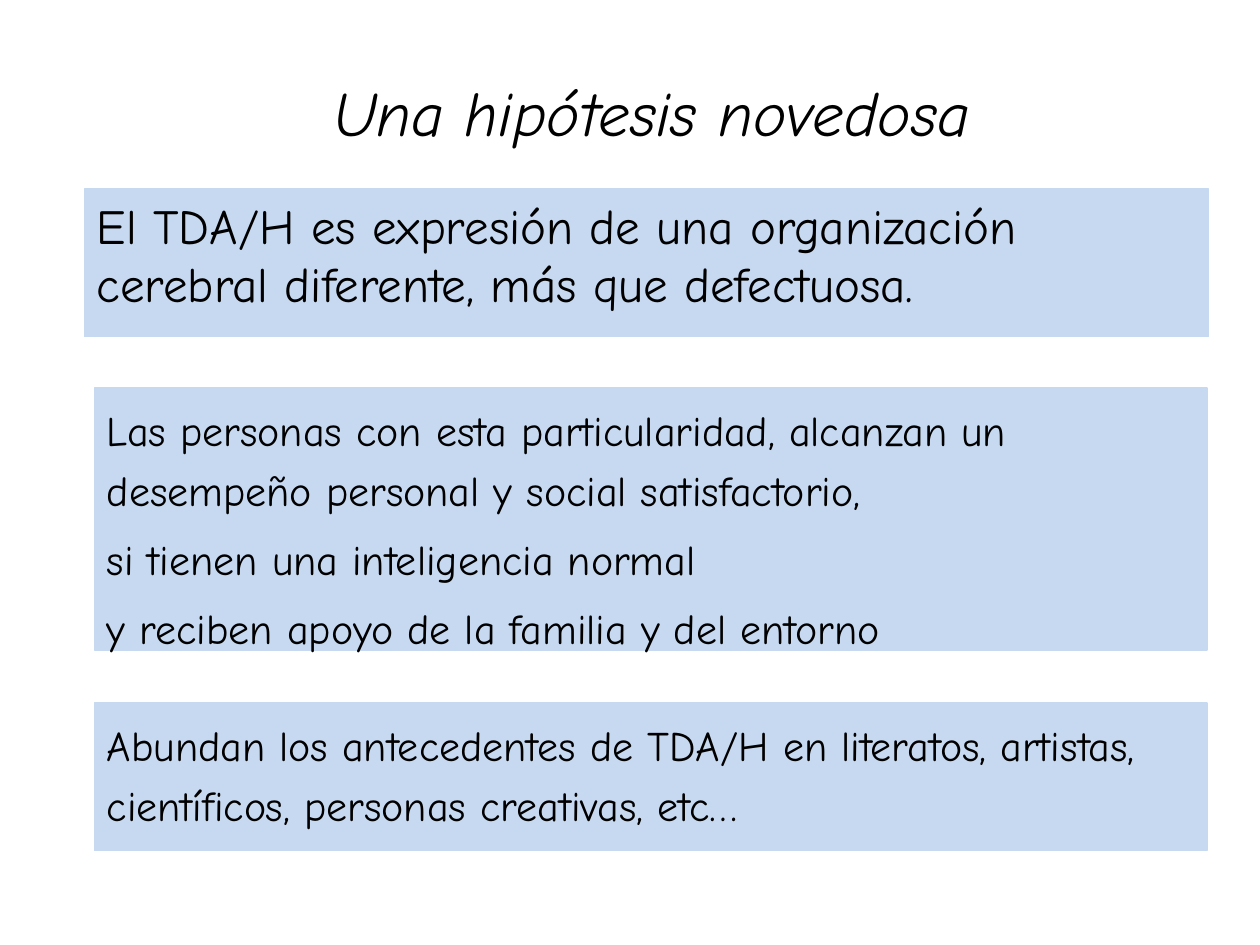
from pptx import Presentation
from pptx.dml.color import RGBColor
from pptx.enum.shapes import MSO_SHAPE
from pptx.enum.text import MSO_ANCHOR, PP_ALIGN
from pptx.util import Inches, Pt

RECT = MSO_SHAPE.RECTANGLE
TOP, MIDDLE = MSO_ANCHOR.TOP, MSO_ANCHOR.MIDDLE
LEFT, CENTER = PP_ALIGN.LEFT, PP_ALIGN.CENTER


def rgb(value):
    return RGBColor.from_string(value)


def write(tf, text, font, color, size=24, italic=False, align=LEFT,
          anchor=TOP, spacing=1.0, before=0):
    tf.word_wrap = True
    tf.vertical_anchor = anchor
    for i, line in enumerate(text.split("\n")):
        p = tf.paragraphs[0] if i == 0 else tf.add_paragraph()
        p.alignment = align
        p.line_spacing = spacing
        p.space_before = Pt(before)
        r = p.add_run()
        r.text = line
        r.font.name = font
        r.font.size = Pt(size)
        r.font.italic = italic
        r.font.color.rgb = rgb(color)


class Deck:
    font = "Comic Neue"
    ink = "000000"
    panel_fill = "C6D9F1"

    def __init__(self, width, height):
        self.prs = Presentation()
        self.prs.slide_width = Inches(width)
        self.prs.slide_height = Inches(height)
        self.s = self.prs.slides.add_slide(self.prs.slide_layouts[6])

    def title(self, text, x, y, w, h):
        sp = self.s.shapes.add_textbox(Inches(x), Inches(y), Inches(w), Inches(h))
        write(sp.text_frame, text, self.font, self.ink, size=36, italic=True,
              align=CENTER, anchor=MIDDLE)

    def panel(self, text, x, y, w, h, size=24, spacing=1.2):
        sp = self.s.shapes.add_shape(RECT, Inches(x), Inches(y), Inches(w), Inches(h))
        sp.shadow.inherit = False
        sp.fill.solid()
        sp.fill.fore_color.rgb = rgb(self.panel_fill)
        sp.line.color.rgb = rgb(self.panel_fill)
        sp.line.width = Pt(0.75)
        write(sp.text_frame, text, self.font, self.ink, size=size,
              spacing=spacing, before=size * 0.2)


def main():
    deck = Deck(10, 7.5)
    deck.title("Una hipótesis novedosa", 0.92, 0.42, 8.5, 0.92)
    deck.panel("El TDA/H es expresión de una organización cerebral diferente, "
               "más que defectuosa.", 0.67, 1.5, 8.92, 1.17, size=28, spacing=1.0)
    deck.panel("Las personas con esta particularidad, alcanzan un desempeño "
               "personal y social satisfactorio,\n"
               "si tienen una inteligencia normal\n"
               "y reciben apoyo de la familia y del entorno", 0.75, 3.08, 8.83, 2.08)
    deck.panel("Abundan los antecedentes de TDA/H en literatos, artistas, "
               "científicos, personas creativas, etc…", 0.75, 5.58, 8.83, 1.17)
    deck.prs.save("out.pptx")


if __name__ == "__main__":
    main()
